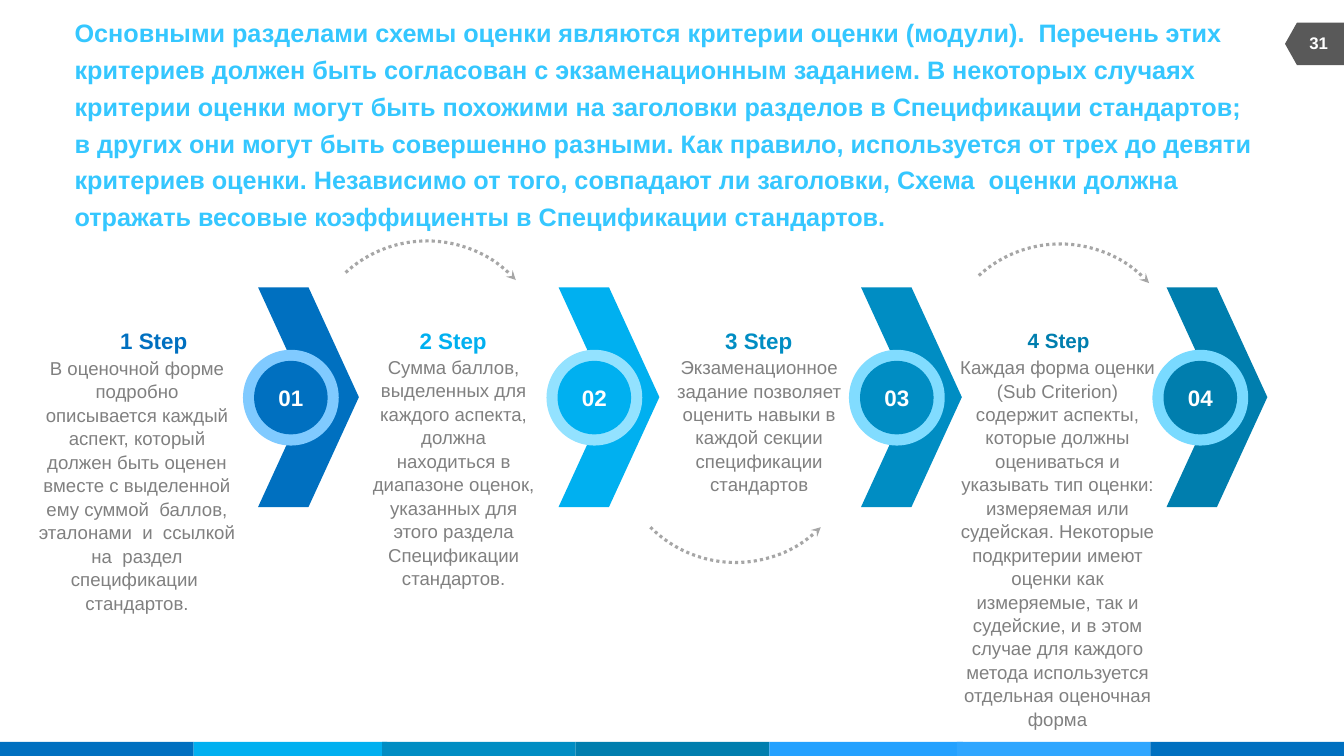
import pptx
import pptx.util
import pptx.dml.color
import pptx.enum.dml
import pptx.enum.shapes
import pptx.enum.text
import pptx.oxml
import pptx.oxml.ns

Inches = pptx.util.Inches
Pt = pptx.util.Pt
SHAPE = pptx.enum.shapes.MSO_SHAPE
ANCHOR = pptx.enum.text.MSO_ANCHOR
ALIGN = pptx.enum.text.PP_ALIGN

TITLE = [
    "Основными разделами схемы оценки являются критерии оценки (модули).  Перечень этих",
    "критериев должен быть согласован с экзаменационным заданием. В некоторых случаях",
    "критерии оценки могут быть похожими на заголовки разделов в Спецификации стандартов;",
    "в других они могут быть совершенно разными. Как правило, используется от трех до девяти",
    "критериев оценки. Независимо от того, совпадают ли заголовки, Схема  оценки должна",
    "отражать весовые коэффициенты в Спецификации стандартов.",
]
PAGE_NUMBER = "31"

# heading, heading size, heading box, description, description box,
# chevron left, ring left, colour, ring colour
STEPS = [
    ("1 Step", 16, (1.19, 3.24, 0.67, 0.27),
     "В оценочной форме подробно описывается каждый аспект, который должен быть оценен "
     "вместе с выделенной ему суммой  баллов, эталонами  и  ссылкой  на  раздел  "
     "спецификации  стандартов.",
     (0.38, 3.53, 1.96, 2.47), 2.56, 2.41, "0070C0", "80CAFF"),
    ("2 Step", 16, (4.16, 3.24, 0.67, 0.27),
     "Сумма баллов, выделенных для каждого аспекта, должна находиться в диапазоне оценок, "
     "указанных для этого раздела Спецификации стандартов.",
     (3.67, 3.52, 1.66, 2.24), 5.54, 5.42, "00B0F0", "93E2FF"),
    ("3 Step", 16, (7.19, 3.24, 0.67, 0.27),
     "Экзаменационное задание позволяет оценить навыки в каждой секции спецификации "
     "стандартов",
     (6.69, 3.52, 1.68, 1.35), 8.54, 8.42, "008DC3", "81DCFF"),
    ("4 Step", 14.7, (10.19, 3.25, 0.62, 0.25),
     "Каждая форма оценки (Sub Criterion) содержит аспекты, которые должны оцениваться и "
     "указывать тип оценки: измеряемая или судейская. Некоторые подкритерии имеют оценки "
     "как измеряемые, так и судейские, и в этом случае для каждого метода используется "
     "отдельная оценочная форма",
     (9.51, 3.52, 1.96, 3.59), 11.57, 11.43, "007EAE", "79DAFF"),
]
# left, top, rotation, mirrored
ARCS = [(3.04, 2.39, 317.5, False), (6.1, 3.19, 225, True), (9.32, 2.42, 317.5, False)]
FOOTER = [(0, "0070C0"), (1.92, "00B0F0"), (3.79, "008DC3"), (5.71, "007EAE"),
          (7.63, "23A1FF"), (9.49, "2FA6FF"), (11.41, "0070C0")]

CHEVRON_TOP, CHEVRON_WIDTH, CHEVRON_HEIGHT = 2.85, 1, 2.18
RING_TOP, RING_SIZE, RING_BORDER = 3.47, 0.95, 0.11
ARC_SIZE = 2.39

deck = pptx.Presentation()
deck.slide_width, deck.slide_height = Inches(13.33), Inches(7.5)
slide = deck.slides.add_slide(deck.slide_layouts[5])


def rgb(value):
    return pptx.dml.color.RGBColor.from_string(value)


def place(item, box):
    item.left, item.top, item.width, item.height = map(Inches, box)


def write(item, *lines, size, color, bold=False, align=ALIGN.CENTER,
          anchor=ANCHOR.MIDDLE, wrap=True, before=0, spacing=1.0):
    frame = item.text_frame
    frame.margin_left = frame.margin_right = frame.margin_top = frame.margin_bottom = 0
    frame.word_wrap = wrap
    frame.auto_size = pptx.enum.text.MSO_AUTO_SIZE.NONE
    frame.vertical_anchor = anchor
    for index, line in enumerate(lines):
        paragraph = frame.add_paragraph() if index else frame.paragraphs[0]
        paragraph.alignment = align
        paragraph.space_before = Pt(before)
        paragraph.line_spacing = spacing
        run = paragraph.add_run()
        run.text = line
        run.font.name, run.font.size, run.font.bold = "Arial", Pt(size), bold
        run.font.color.rgb = rgb(color)


def add_text(box, text, **style):
    item = slide.shapes.add_textbox(*map(Inches, box))
    write(item, text, **style)


def add_filled(kind, box, color):
    item = slide.shapes.add_shape(kind, *map(Inches, box))
    item.shadow.inherit = False
    item.fill.solid()
    item.fill.fore_color.rgb = rgb(color)
    item.line.fill.background()
    return item


def add_arc(left, top, rotation, mirrored):
    arc = slide.shapes.add_shape(SHAPE.ARC, *map(Inches, (left, top, ARC_SIZE, ARC_SIZE)))
    arc.shadow.inherit = False
    arc.fill.background()
    arc.rotation = rotation
    if mirrored:
        arc._element.spPr.xfrm.set("flipH", "1")
    arc.line.color.rgb = rgb("A6A6A6")
    arc.line.width = Pt(2.25)
    arc.line.dash_style = pptx.enum.dml.MSO_LINE.ROUND_DOT
    arc.line._get_or_add_ln().append(pptx.oxml.parse_xml(
        f'<a:tailEnd {pptx.oxml.ns.nsdecls("a")} type="stealth"/>'))


for left, color in FOOTER:
    add_filled(SHAPE.RECTANGLE, (left, 7.36, 1.92, 0.14), color)

title = slide.shapes.title
place(title, (0.74, 0.83, 11.99, 0.8))
write(title, *TITLE, size=18, color="35C7FF", bold=True, align=ALIGN.LEFT,
      wrap=False, before=3.6, spacing=1.055)

page_tag = add_filled(SHAPE.FLOWCHART_OFFPAGE_CONNECTOR, (12.83, 0.14, 0.42, 0.59), "595959")
page_tag.rotation = 90
add_text((12.8, 0.22, 0.56, 0.4), PAGE_NUMBER, size=12, color="FFFFFF", bold=True)

for number, step in enumerate(STEPS, 1):
    (heading, heading_size, heading_box, description, description_box,
     chevron_left, ring_left, color, ring_color) = step
    add_text(heading_box, heading, size=heading_size, color=color, bold=True, wrap=False)
    add_text(description_box, description, size=13.3, color="808080",
             anchor=ANCHOR.TOP, spacing=1.055)
    add_filled(SHAPE.CHEVRON, (chevron_left, CHEVRON_TOP, CHEVRON_WIDTH, CHEVRON_HEIGHT), color)
    add_filled(SHAPE.OVAL, (ring_left, RING_TOP, RING_SIZE, RING_SIZE), ring_color)
    disc_size = RING_SIZE - 2 * RING_BORDER
    disc = add_filled(SHAPE.OVAL, (ring_left + RING_BORDER, RING_TOP + RING_BORDER,
                                   disc_size, disc_size), color)
    write(disc, f"{number:02}", size=16, color="FFFFFF", bold=True)

for arc_place in ARCS:
    add_arc(*arc_place)

deck.save("out.pptx")
